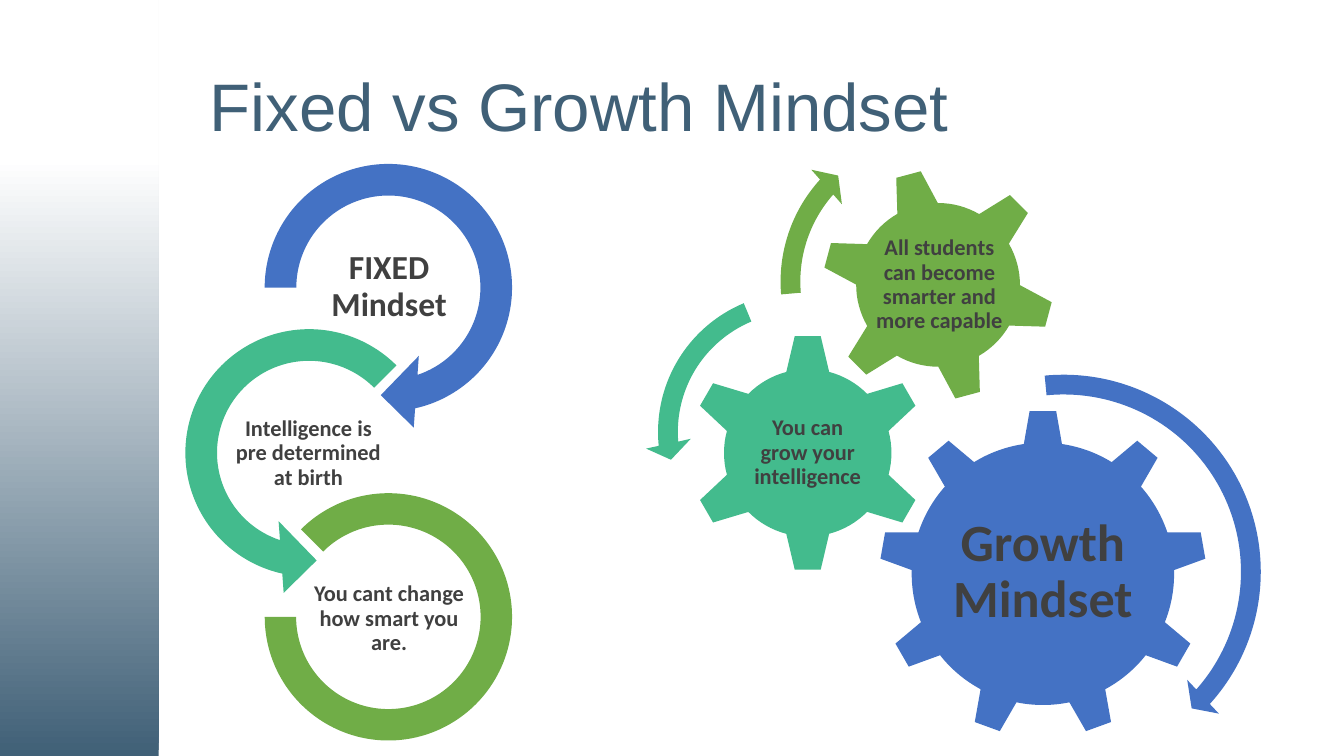
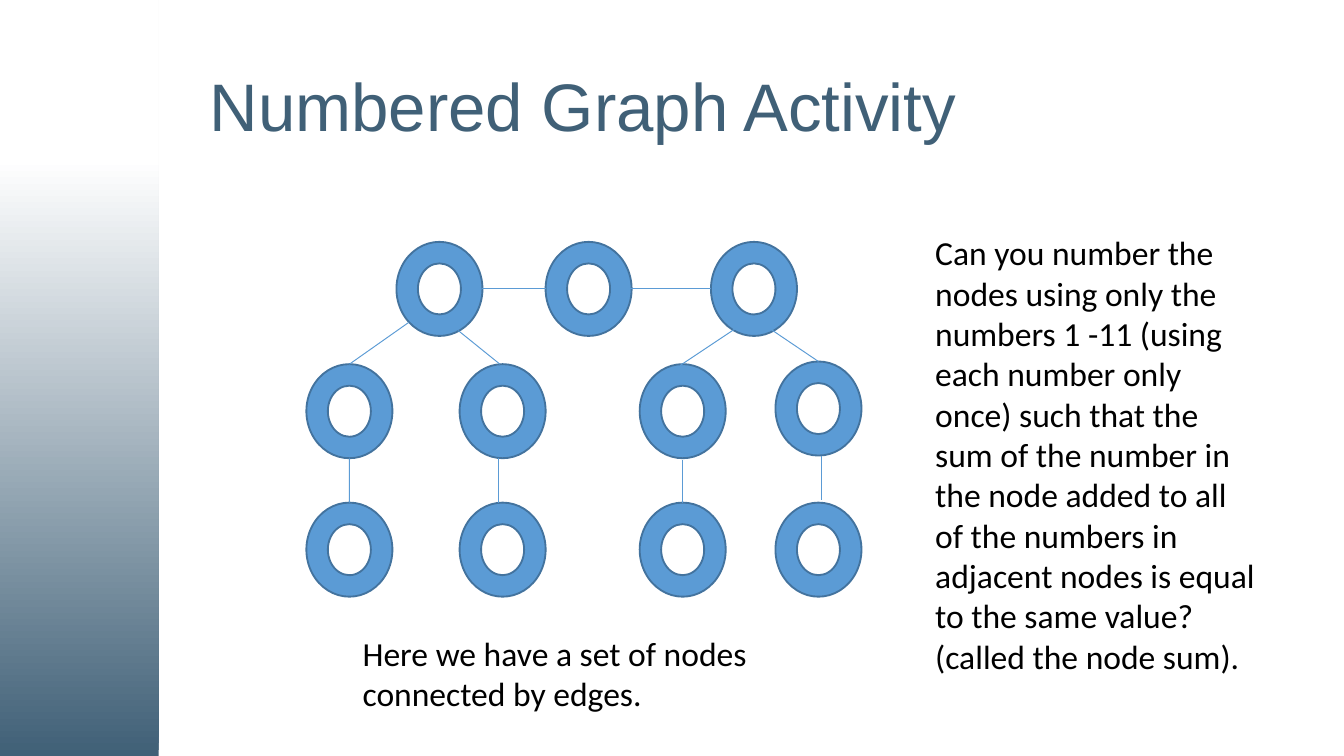
from dataclasses import dataclass
from typing import Optional

from lxml import etree
from pptx import Presentation
from pptx.dml.color import RGBColor
from pptx.enum import shapes, text
from pptx.oxml.ns import qn
from pptx.util import Inches, Pt

# Shared look
SLATE, WHITE, BLACK, CHARCOAL = "406077", "FFFFFF", "000000", "404040"
BLUE, TEAL, GREEN = "4472C4", "43BB8D", "70AD47"
NODE_FILL, NODE_LINE = "5B9BD5", "43739E"
SLIDE_W, BAND_W = 10, 1.18
SLIDE_H = SLIDE_W * 9 / 16
NODE_W, NODE_H = 0.64, 0.7
MSO, ALIGN = shapes.MSO_SHAPE, text.PP_ALIGN


@dataclass
class Figure:
    kind: int
    left: float
    top: float
    size: float
    color: str
    adjustments: tuple = ()
    rotation: float = 0


@dataclass
class Label:
    words: str
    left: float
    top: float
    width: float
    height: float
    size: int = 12
    inset: float = 0.01


@dataclass
class Edge:
    x1: float
    y1: float
    x2: float
    y2: float
    child: Optional[int] = None  # node whose top the edge joins


FIXED_FIGURES = [
    Figure(MSO.CIRCULAR_ARROW, 1.82, 1.07, 2.14, BLUE, (0.11, 11.42, 45, 108, 0.125)),
    Figure(MSO.LEFT_CIRCULAR_ARROW, 1.23, 2.3, 2.14, TEAL, (0.11, 11.42, 63, 189, 0.125)),
    Figure(MSO.BLOCK_ARC, 1.97, 3.67, 1.84, GREEN, (135, 108, 0.127)),
]
FIXED_LABELS = [
    Label("FIXED Mindset", 2.3, 1.84, 1.19, 0.59, size=18),
    Label("Intelligence is pre determined at birth", 1.7, 3.08, 1.19, 0.59),
    Label("You cant change how smart you are.", 2.3, 4.31, 1.19, 0.59),
]
GROWTH_FIGURES = [
    Figure(MSO.GEAR_9, 6.54, 3.05, 2.44, BLUE),
    Figure(MSO.GEAR_6, 5.12, 2.48, 1.78, TEAL),
    Figure(MSO.GEAR_6, 6.11, 1.25, 1.74, GREEN, rotation=345),
    Figure(MSO.CIRCULAR_ARROW, 6.35, 2.69, 3.13, BLUE, (0.047, 2.99, 25.13, 158.68, 0.055)),
    Figure(MSO.LEFT_CIRCULAR_ARROW, 4.8, 2.08, 2.27, TEAL, (0.065, 4.3, 104.89, 148.38, 0.075)),
    Figure(MSO.CIRCULAR_ARROW, 5.71, 0.87, 2.45, GREEN, (0.06, 3.94, 133.14, 105.08, 0.07)),
]
GROWTH_LABELS = [
    Label("Growth Mindset", 7.03, 3.63, 1.46, 1.26, size=28, inset=0.04),
    Label("You can grow your intelligence", 5.57, 2.93, 0.88, 0.88),
    Label("All students can become smarter and more capable", 6.5, 1.63, 0.98, 0.98),
]

COLUMNS = (2.28, 3.42, 4.76, 5.77)
NODES = (
    [(x, 1.8) for x in (2.95, 4.06, 5.29)]
    + [(x, 2.69 if x == COLUMNS[-1] else 2.71) for x in COLUMNS]
    + [(x, 3.74) for x in COLUMNS]
)
EDGES = [
    Edge(3.04, 2.4, 2.6, 2.71, child=3),
    Edge(5.51, 2.42, 5.06, 2.72),
    Edge(3.41, 2.46, 3.72, 2.71),
    Edge(5.72, 2.44, 6.09, 2.69, child=6),
    Edge(3.59, 2.15, 4.06, 2.15),
    Edge(4.61, 2.15, 5.29, 2.15),
    Edge(2.6, 3.41, 2.6, 3.74, child=7),
    Edge(3.71, 3.41, 3.71, 3.74),
    Edge(5.08, 3.42, 5.08, 3.74, child=9),
    Edge(6.11, 3.39, 6.11, 3.72),
]


def rgb(color: str) -> RGBColor:
    return RGBColor.from_string(color)


def style_text(p, size: int, color: str, font: str = "Calibri", bold: bool = False) -> None:
    for r in p.runs:
        r.font.name, r.font.size, r.font.bold = font, Pt(size), bold
        r.font.color.rgb = rgb(color)


def add_band(s) -> None:
    sp = s.shapes.add_shape(MSO.RECTANGLE, 0, 0, Inches(BAND_W), Inches(SLIDE_H))
    sp.shadow.inherit = False
    sp.line.fill.background()
    sp.fill.gradient()
    sp.fill.gradient_angle = 90
    for stop, color, position in zip(sp.fill.gradient_stops, (SLATE, WHITE), (0, 0.79)):
        stop.color.rgb = rgb(color)
        stop.position = position


def new_slide(prs, title: str):
    s = prs.slides.add_slide(prs.slide_layouts[5])
    add_band(s)
    sp = s.shapes.title
    sp.left, sp.top, sp.width, sp.height = map(Inches, (1.46, 0.3, 7.23, 1.03))
    tf = sp.text_frame
    tf.text = title
    tf.auto_size = text.MSO_AUTO_SIZE.NONE
    tf.vertical_anchor = text.MSO_ANCHOR.MIDDLE
    p = tf.paragraphs[0]
    p.alignment, p.line_spacing = ALIGN.LEFT, 0.9
    style_text(p, 36, SLATE, "Arial")
    return s


def add_figure(group, fig: Figure) -> None:
    sp = group.shapes.add_shape(
        fig.kind, Inches(fig.left), Inches(fig.top), Inches(fig.size), Inches(fig.size))
    sp.shadow.inherit = False
    sp.fill.solid()
    sp.fill.fore_color.rgb = rgb(fig.color)
    sp.line.fill.background()
    sp.rotation = fig.rotation
    for i, value in enumerate(fig.adjustments):
        sp.adjustments[i] = value


def add_label(group, label: Label) -> None:
    sp = group.shapes.add_textbox(
        Inches(label.left), Inches(label.top), Inches(label.width), Inches(label.height))
    tf = sp.text_frame
    tf.text = label.words
    tf.word_wrap = True
    tf.vertical_anchor = text.MSO_ANCHOR.MIDDLE
    tf.margin_left = tf.margin_right = tf.margin_top = tf.margin_bottom = Inches(label.inset)
    p = tf.paragraphs[0]
    p.alignment, p.line_spacing = ALIGN.CENTER, 0.9
    style_text(p, label.size, CHARCOAL, bold=True)


def add_diagram(s, figures: list[Figure], labels: list[Label]) -> None:
    group = s.shapes.add_group_shape()
    for fig in figures:
        add_figure(group, fig)
    for label in labels:
        add_label(group, label)


def add_node(s, left: float, top: float):
    sp = s.shapes.add_shape(
        MSO.DONUT, Inches(left), Inches(top), Inches(NODE_W), Inches(NODE_H))
    sp.shadow.inherit = False
    sp.fill.solid()
    sp.fill.fore_color.rgb = rgb(NODE_FILL)
    sp.line.color.rgb = rgb(NODE_LINE)
    sp.line.width = Pt(1)
    return sp


def add_edge(s, edge: Edge, nodes: list) -> None:
    line = s.shapes.add_connector(
        shapes.MSO_CONNECTOR.STRAIGHT,
        Inches(edge.x1), Inches(edge.y1), Inches(edge.x2), Inches(edge.y2))
    line.line.color.rgb = rgb(NODE_FILL)
    line.line.width = Pt(0.5)
    etree.SubElement(line._element.spPr, qn("a:effectLst"))
    if edge.child is not None:
        line.end_connect(nodes[edge.child], 0)


def add_note(s, words: str, left: float, top: float, width: float, height: float) -> None:
    sp = s.shapes.add_textbox(Inches(left), Inches(top), Inches(width), Inches(height))
    tf = sp.text_frame
    tf.text = words
    tf.word_wrap = True
    tf.auto_size = text.MSO_AUTO_SIZE.SHAPE_TO_FIT_TEXT
    style_text(tf.paragraphs[0], 18, BLACK)


def main() -> None:
    prs = Presentation()
    prs.slide_width, prs.slide_height = Inches(SLIDE_W), Inches(SLIDE_H)

    # Mindset diagrams
    s = new_slide(prs, "Fixed vs Growth Mindset")
    add_diagram(s, FIXED_FIGURES, FIXED_LABELS)
    add_diagram(s, GROWTH_FIGURES, GROWTH_LABELS)

    # Graph of nodes and edges
    s = new_slide(prs, "Numbered Graph Activity")
    nodes = [add_node(s, left, top) for left, top in NODES]
    for edge in EDGES:
        add_edge(s, edge, nodes)
    add_note(
        s,
        "Can you number the nodes using only the numbers 1 -11 (using each number only once) "
        "such that the sum of the number in the node added to all of the numbers in adjacent "
        "nodes is equal to the same value? (called the node sum).",
        6.86, 1.68, 2.61, 3.43)
    add_note(s, "Here we have a set of nodes connected by edges.", 2.6, 4.66, 3.4, 0.71)

    prs.save("out.pptx")


if __name__ == "__main__":
    main()
